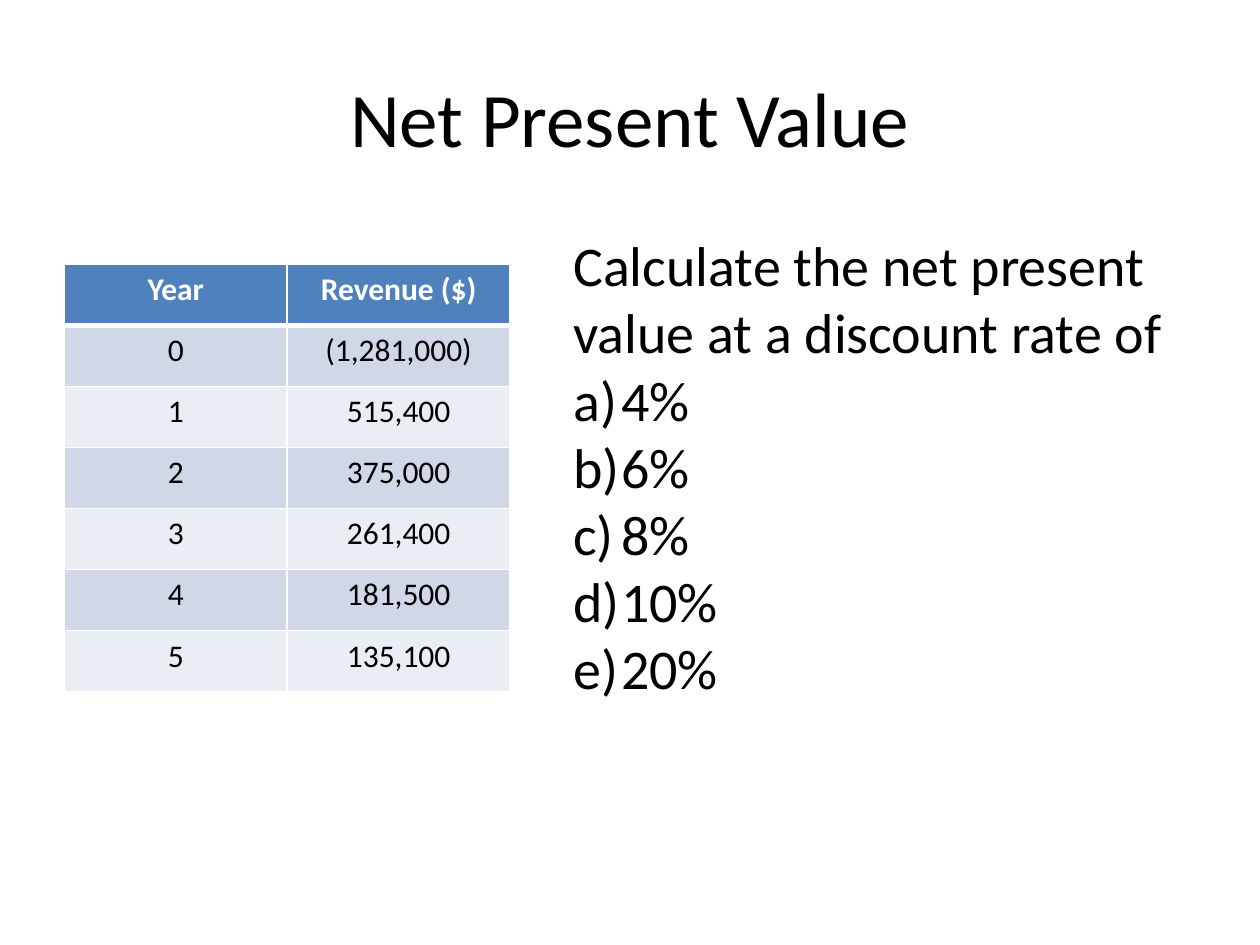
import pptx
import pptx.util
import pptx.dml.color
import pptx.enum.text
import pptx.oxml.ns
import lxml.etree

Inches, Pt = pptx.util.Inches, pptx.util.Pt
RGB = pptx.dml.color.RGBColor.from_string
PP_ALIGN = pptx.enum.text.PP_ALIGN
qn = pptx.oxml.ns.qn

# Content
TITLE = "Net Present Value"
CASH_FLOWS = [
    ("Year", "Revenue ($)"),
    ("0", "(1,281,000)"),
    ("1", "515,400"),
    ("2", "375,000"),
    ("3", "261,400"),
    ("4", "181,500"),
    ("5", "135,100"),
]
QUESTION = "Calculate the net present value at a discount rate of"
RATES = ["4%", "6%", "8%", "10%", "20%"]

# Theme and layout
THEME = {
    "font": "Calibri",
    "text": "000000", "border": "FFFFFF",
    "header": "4F81BD", "header_text": "FFFFFF",
    "bands": ("D0D8E8", "E9EDF4"),
    "title_size": 44, "body_size": 32, "table_size": 18,
    "thin": 1, "thick": 3,
}
TITLE_BOX = (0.5, 0.3, 9, 1.25)
TABLE_BOX = (0.51, 2.1, 3.54, 3.39)
BODY_BOX = (4.45, 1.78, 5.12, 3.87)
INDENT = 0.38


def place(sp, box):
    for name, value in zip(("left", "top", "width", "height"), box):
        setattr(sp, name, Inches(value))


def write(p, text, size, color=THEME["text"], bold=False, align=PP_ALIGN.LEFT):
    p.alignment = align
    r = p.add_run()
    r.text = text
    style = {"name": THEME["font"], "size": Pt(size), "bold": bold}
    for name, value in style.items():
        setattr(r.font, name, value)
    r.font.color.rgb = RGB(color)


def add_border(cell, side, width):
    tc_pr = cell._tc.get_or_add_tcPr()
    ln = lxml.etree.SubElement(tc_pr, qn("a:ln" + side), w=str(Pt(width)))
    fill = lxml.etree.SubElement(ln, qn("a:solidFill"))
    lxml.etree.SubElement(fill, qn("a:srgbClr"), val=THEME["border"])


def set_list_format(p, numbered):
    p.space_before = Pt(0)
    p_pr = p._p.get_or_add_pPr()
    indent = Inches(INDENT) if numbered else 0
    p_pr.set("marL", str(indent))
    p_pr.set("indent", str(-indent))
    if numbered:
        lxml.etree.SubElement(p_pr, qn("a:buFont"), typeface=THEME["font"])
        lxml.etree.SubElement(p_pr, qn("a:buAutoNum"), type="alphaLcParenR")
    else:
        lxml.etree.SubElement(p_pr, qn("a:buNone"))


prs = pptx.Presentation()
prs.slide_width, prs.slide_height = Inches(10), Inches(7.5)
s = prs.slides.add_slide(prs.slide_layouts[1])

# Title
title = s.shapes.title
place(title, TITLE_BOX)
title.text_frame.vertical_anchor = pptx.enum.text.MSO_ANCHOR.MIDDLE
write(title.text_frame.paragraphs[0], TITLE, THEME["title_size"], align=PP_ALIGN.CENTER)

# Cash flow table
table = s.shapes.add_table(len(CASH_FLOWS), len(CASH_FLOWS[0]),
                           *map(Inches, TABLE_BOX)).table
for i, row in enumerate(CASH_FLOWS):
    header = i == 0
    fill = THEME["header"] if header else THEME["bands"][(i - 1) % 2]
    color = THEME["header_text"] if header else THEME["text"]
    widths = {"L": THEME["thin"], "R": THEME["thin"],
              "T": THEME["thick"] if i == 1 else THEME["thin"],
              "B": THEME["thick"] if header else THEME["thin"]}
    for j, text in enumerate(row):
        cell = table.cell(i, j)
        for side, width in widths.items():
            add_border(cell, side, width)
        cell.fill.solid()
        cell.fill.fore_color.rgb = RGB(fill)
        write(cell.text_frame.paragraphs[0], text, THEME["table_size"],
              color, header, PP_ALIGN.CENTER)

# Question and lettered discount rates
body = s.placeholders[1]
place(body, BODY_BOX)
tf = body.text_frame
tf.word_wrap = True
tf.auto_size = pptx.enum.text.MSO_AUTO_SIZE.SHAPE_TO_FIT_TEXT
for i, text in enumerate([QUESTION] + RATES):
    p = tf.add_paragraph() if i else tf.paragraphs[0]
    write(p, text, THEME["body_size"])
    set_list_format(p, numbered=i > 0)

prs.save("out.pptx")
